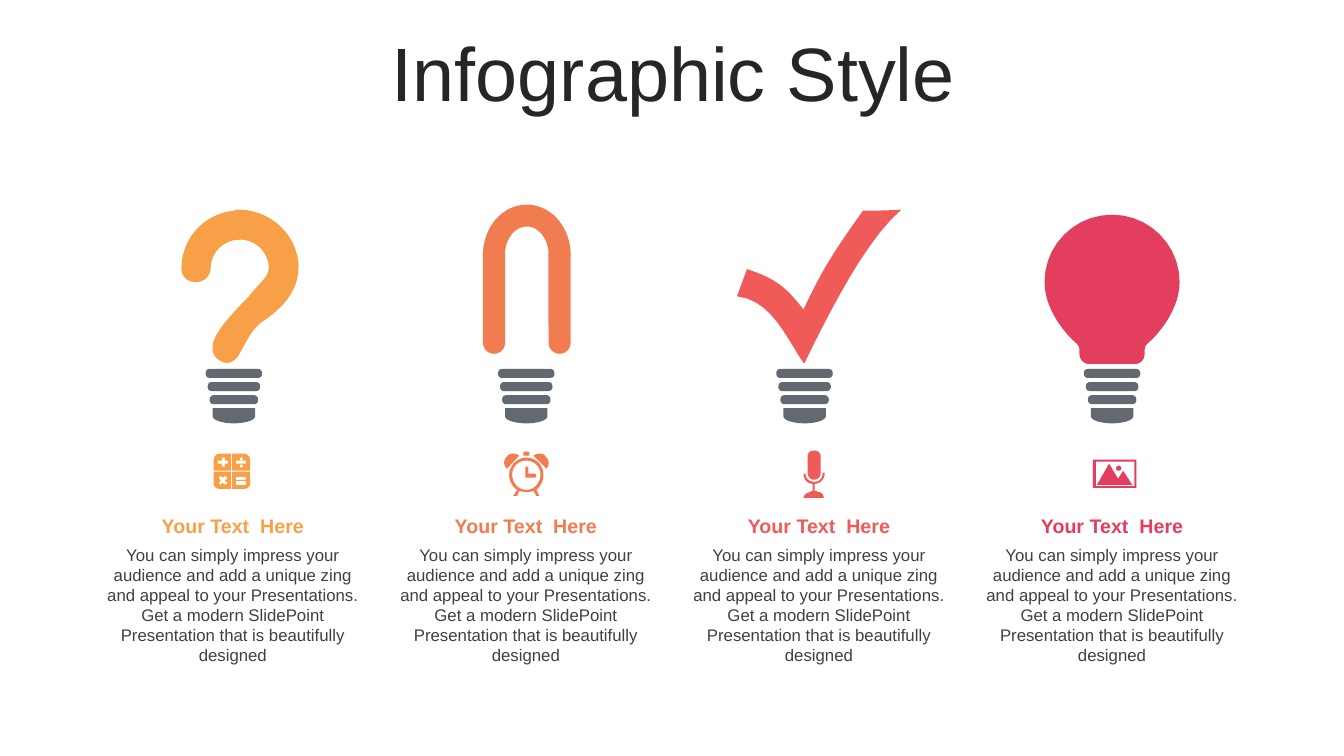
import pptx
import pptx.dml.color
import pptx.enum.shapes
import pptx.enum.text
import pptx.oxml.ns
import pptx.util
from lxml import etree
from pptx.dml.color import RGBColor
from pptx.enum.shapes import MSO_SHAPE
from pptx.util import Inches

AMBER = RGBColor(0xF8, 0xA0, 0x47)
ORANGE = RGBColor(0xF0, 0x7C, 0x4F)
CORAL = RGBColor(0xF0, 0x5A, 0x59)
CRIMSON = RGBColor(0xE4, 0x3E, 0x5F)
SLATE = RGBColor(0x22, 0x2A, 0x35)
TITLE_GREY = RGBColor(0x26, 0x26, 0x26)
BODY_GREY = RGBColor(0x40, 0x40, 0x40)

TITLE = "Infographic Style"
HEADING = "Your Text  Here"
BODY = ("You can simply impress your audience and add a unique zing and appeal "
        "to your Presentations. Get a modern SlidePoint Presentation that is "
        "beautifully designed")

QUESTION = ["""M 2.37 2.08 C 2.64 2.08 2.89 2.27 2.95 2.54 3.01 2.82 2.84 3.04 2.59 3.2
2.49 3.28 2.45 3.38 2.38 3.5 2.35 3.57 2.29 3.6 2.25 3.6 2.2 3.6 2.12 3.55 2.11 3.48
L 2.11 3.41 C 2.14 3.29 2.29 3.12 2.47 2.94 2.57 2.8 2.7 2.74 2.66 2.6
2.63 2.46 2.49 2.36 2.35 2.38 2.2 2.39 2.09 2.52 2.09 2.66
2.09 2.74 2.02 2.8 1.94 2.8 1.86 2.8 1.8 2.74 1.8 2.67
L 1.8 2.66 C 1.8 2.37 2.02 2.12 2.32 2.09 2.33 2.08 2.35 2.08 2.37 2.08"""]
CHECK = ["""M 8.94 2.08 C 8.59 2.38 8.24 3.07 7.98 3.6 L 7.97 3.6
C 7.81 3.37 7.65 2.97 7.31 2.94 L 7.41 2.67 C 7.72 2.77 7.81 2.87 7.97 3.07
8.15 2.69 8.24 2.54 8.56 2.09 8.68 2.09 8.77 2.09 8.94 2.08"""]
BULB = ["""M 11.03 2.13 C 11.4 2.13 11.7 2.43 11.7 2.8 11.7 3.05 11.52 3.29 11.38 3.41
11.34 3.45 11.36 3.48 11.35 3.54 11.33 3.59 11.3 3.61 11.26 3.61 L 10.8 3.61
C 10.76 3.61 10.73 3.59 10.71 3.54 10.7 3.48 10.72 3.45 10.68 3.41
10.54 3.29 10.36 3.05 10.36 2.8 10.36 2.43 10.66 2.13 11.03 2.13"""]
CUP = ["""M 0.21 4.05 L -0.21 4.05 -0.21 4.13 C -0.21 4.17 -0.11 4.2 0 4.2
0.11 4.2 0.21 4.17 0.21 4.13"""]

CALCULATOR = [
    "M 2.34 4.77 L 2.34 4.81 2.44 4.81 2.44 4.77",
    "M 2.34 4.73 L 2.34 4.76 2.44 4.76 2.44 4.73",
    """M 2.19 4.72 L 2.17 4.74 2.19 4.77 2.17 4.79 2.19 4.81 2.21 4.79 2.23 4.81 2.26 4.79
    2.23 4.77 2.26 4.74 2.23 4.72 2.21 4.74""",
    "M 2.3 4.68 L 2.48 4.68 2.48 4.8 C 2.48 4.83 2.45 4.85 2.42 4.85 L 2.3 4.85",
    "M 2.12 4.68 L 2.29 4.68 2.29 4.85 2.18 4.85 C 2.15 4.85 2.12 4.83 2.12 4.8",
    """M 2.39 4.61 C 2.38 4.61 2.38 4.61 2.38 4.62 2.38 4.63 2.38 4.64 2.39 4.64
    2.4 4.64 2.41 4.63 2.41 4.62 2.41 4.61 2.4 4.61 2.39 4.61""",
    "M 2.34 4.57 L 2.34 4.6 2.44 4.6 2.44 4.57",
    """M 2.2 4.54 L 2.2 4.57 2.16 4.57 2.16 4.6 2.2 4.6 2.2 4.63 2.23 4.63 2.23 4.6
    2.26 4.6 2.26 4.57 2.23 4.57 2.23 4.54""",
    """M 2.39 4.54 C 2.38 4.54 2.38 4.54 2.38 4.55 2.38 4.56 2.38 4.57 2.39 4.57
    2.4 4.57 2.41 4.56 2.41 4.55 2.41 4.54 2.4 4.54 2.39 4.54""",
    "M 2.3 4.5 L 2.42 4.5 C 2.45 4.5 2.48 4.53 2.48 4.56 L 2.48 4.67 2.3 4.67",
    "M 2.18 4.5 L 2.29 4.5 2.29 4.67 2.12 4.67 2.12 4.56 C 2.12 4.53 2.15 4.5 2.18 4.5",
]
CLOCK = [
    """M 5.22 4.63 C 5.23 4.63 5.24 4.63 5.24 4.64 L 5.24 4.7 5.3 4.7
    C 5.31 4.7 5.32 4.71 5.32 4.72 5.32 4.73 5.31 4.74 5.3 4.74 L 5.22 4.74
    C 5.21 4.74 5.21 4.73 5.21 4.72 L 5.21 4.64 C 5.21 4.63 5.21 4.63 5.22 4.63""",
    """M 5.22 4.57 C 5.14 4.57 5.08 4.63 5.08 4.71 5.08 4.79 5.14 4.86 5.22 4.86
    5.3 4.86 5.36 4.79 5.36 4.71 5.36 4.63 5.3 4.57 5.22 4.57""",
    """M 5.22 4.54 C 5.32 4.54 5.39 4.62 5.39 4.71 5.39 4.77 5.36 4.83 5.32 4.86
    L 5.35 4.92 5.32 4.92 5.29 4.87 C 5.27 4.88 5.25 4.88 5.22 4.88
    5.2 4.88 5.17 4.88 5.15 4.87 L 5.13 4.92 5.09 4.92 5.13 4.86
    C 5.08 4.83 5.05 4.77 5.05 4.71 5.05 4.62 5.13 4.54 5.22 4.54""",
    """M 5.09 4.5 C 5.11 4.5 5.13 4.51 5.15 4.52 L 5.03 4.65
    C 4.99 4.62 4.99 4.56 5.03 4.53 5.04 4.51 5.07 4.5 5.09 4.5""",
    """M 5.35 4.5 C 5.38 4.5 5.4 4.51 5.41 4.53 5.45 4.56 5.45 4.62 5.42 4.65
    L 5.29 4.52 C 5.31 4.51 5.33 4.5 5.35 4.5""",
    """M 5.21 4.48 L 5.23 4.48 C 5.25 4.48 5.25 4.49 5.25 4.5 L 5.25 4.52 5.19 4.52 5.19 4.5
    C 5.19 4.49 5.2 4.48 5.21 4.48""",
]
MICROPHONE = [
    """M 8.18 4.69 C 8.18 4.75 8.14 4.8 8.08 4.8 L 8.08 4.87
    C 8.09 4.87 8.1 4.87 8.11 4.88 8.15 4.88 8.17 4.91 8.17 4.94 L 7.97 4.94
    C 7.97 4.91 8 4.89 8.04 4.88 8.05 4.87 8.05 4.87 8.06 4.87 L 8.06 4.8
    C 8.01 4.8 7.97 4.76 7.97 4.7 L 7.99 4.7 C 7.99 4.75 8.03 4.78 8.08 4.78
    8.13 4.78 8.16 4.74 8.16 4.69""",
    """M 8.07 4.47 C 8.11 4.47 8.14 4.49 8.14 4.53 L 8.14 4.69
    C 8.14 4.73 8.11 4.76 8.07 4.76 8.04 4.76 8.01 4.73 8.01 4.69 L 8.01 4.53
    C 8.01 4.49 8.04 4.47 8.07 4.47""",
]
LANDSCAPE = [
    """M 11.1 4.62 C 11.11 4.62 11.12 4.63 11.12 4.65 11.12 4.66 11.11 4.67 11.1 4.67
    11.08 4.67 11.07 4.66 11.07 4.65 11.07 4.63 11.08 4.62 11.1 4.62""",
    "M 11 4.6 L 11.09 4.75 11.14 4.67 11.23 4.81 10.88 4.81",
    "M 10.87 4.58 L 10.87 4.82 11.25 4.82 11.25 4.58",
    "M 10.84 4.56 L 11.27 4.56 11.27 4.84 10.84 4.84",
]

COLUMNS = [
    (AMBER, 2.32, QUESTION, CALCULATOR),
    (ORANGE, 5.22, None, CLOCK),
    (CORAL, 7.98, CHECK, MICROPHONE),
    (CRIMSON, 11.03, BULB, LANDSCAPE),
]
RINGS = [(3.66, 0.56), (3.79, 0.52), (3.92, 0.48)]
TEXT_LEFT, TEXT_WIDTH, TEXT_PITCH = 0.96, 2.7, 8.72 / 3
CURVE_STEPS = 10


def bezier(p0, nums, t):
    """Return the point at t on a cubic curve."""
    u = 1 - t
    return tuple(u**3 * p0[k] + 3 * u * u * t * nums[k] + 3 * u * t * t * nums[k + 2]
                 + t**3 * nums[k + 4] for k in (0, 1))


def contour(outline):
    """Turn one outline of lines and curves into a list of points."""
    points, nums, command = [], [], "M"
    for token in outline.split():
        if token in ("M", "L", "C"):
            command = token
            continue
        nums.append(float(token))
        if len(nums) < (6 if command == "C" else 2):
            continue
        if command == "C":
            p0 = points[-1]
            points += [bezier(p0, nums, i / CURVE_STEPS) for i in range(1, CURVE_STEPS + 1)]
        else:
            points.append(tuple(nums))
        nums = []
    return points


def paint(sp, color, alpha=None):
    """Give a shape a plain fill without line or shadow."""
    sp.shadow.inherit = False
    sp.fill.solid()
    sp.fill.fore_color.rgb = color
    sp.line.fill.background()
    if alpha:
        clr = sp._element.spPr.find(".//" + pptx.oxml.ns.qn("a:srgbClr"))
        etree.SubElement(clr, pptx.oxml.ns.qn("a:alpha")).set("val", str(alpha * 1000))


def add_outline(s, outlines, color, dx=0, alpha=None):
    """Draw outlines as one shape, moved right by dx inches."""
    parts = [[(Inches(x + dx), Inches(y)) for x, y in contour(o)] for o in outlines]
    builder = s.shapes.build_freeform(*parts[0][0])
    for i, part in enumerate(parts):
        if i:
            builder.move_to(*part[0])
        builder.add_line_segments(part[1:], close=True)
    paint(builder.convert_to_shape(), color, alpha)


def add_preset(s, kind, box, color, alpha=None):
    """Add a filled preset shape in a box given in inches."""
    sp = s.shapes.add_shape(kind, *map(Inches, box))
    paint(sp, color, alpha)
    return sp


def write(tf, text, size, color, bold=False):
    """Write one centred paragraph."""
    tf.word_wrap = True
    p = tf.paragraphs[0]
    p.alignment = pptx.enum.text.PP_ALIGN.CENTER
    r = p.add_run()
    r.text = text
    r.font.name = "Arial"
    r.font.size = pptx.util.Pt(size)
    r.font.bold = bold
    r.font.color.rgb = color
    return p


def add_text(s, box, *style):
    """Add a text box that fits its text."""
    tf = s.shapes.add_textbox(*map(Inches, box)).text_frame
    write(tf, *style)
    tf.auto_size = pptx.enum.text.MSO_AUTO_SIZE.SHAPE_TO_FIT_TEXT


def add_arch(s, color):
    """Draw the arch bulb from an arc and two round-ended legs."""
    add_preset(s, MSO_SHAPE.BLOCK_ARC, (4.79, 2.03, 0.87, 1), color)
    for left in (4.79, 5.44):
        leg = add_preset(s, MSO_SHAPE.ROUND_2_SAME_RECTANGLE, (left, 2.51, 0.22, 1), color)
        leg.adjustments[0] = 0.5
        leg.rotation = 180


def main():
    """Build the slide."""
    prs = pptx.Presentation()
    prs.slide_width, prs.slide_height = Inches(13.33), Inches(7.5)
    s = prs.slides.add_slide(prs.slide_layouts[5])
    title = s.shapes.title
    title.left, title.top, title.width, title.height = map(Inches, (0.35, 0.37, 12.66, 0.79))
    tf = title.text_frame
    tf.auto_size = pptx.enum.text.MSO_AUTO_SIZE.NONE
    tf.vertical_anchor = pptx.enum.text.MSO_ANCHOR.MIDDLE
    write(tf, TITLE, 54, TITLE_GREY).line_spacing = 0.9

    for i, (color, center, bulb, icon) in enumerate(COLUMNS):
        for top, width in RINGS:
            ring = add_preset(s, MSO_SHAPE.ROUNDED_RECTANGLE,
                              (center - width / 2, top, width, 0.09), SLATE, 70)
            ring.adjustments[0] = 0.42
        add_outline(s, CUP, SLATE, center, 70)
        if bulb:
            add_outline(s, bulb, color)
        else:
            add_arch(s, color)
        add_outline(s, icon, color)
        left = TEXT_LEFT + i * TEXT_PITCH
        add_text(s, (left, 5.35, TEXT_WIDTH, 1.31), BODY, 12, BODY_GREY)
        add_text(s, (left, 5.05, TEXT_WIDTH, 0.34), HEADING, 14, color, True)
    prs.save("out.pptx")


if __name__ == "__main__":
    main()
